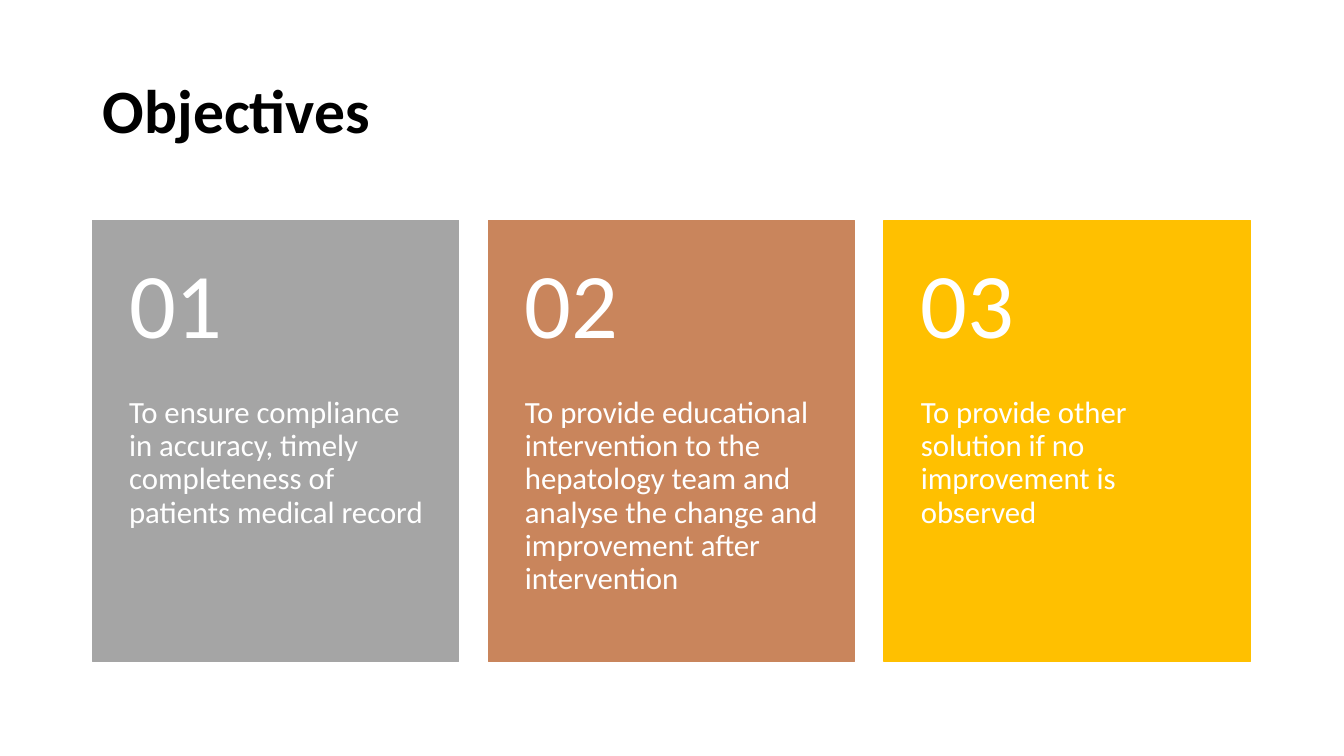
from pptx import Presentation
from pptx.dml.color import RGBColor
from pptx.enum.shapes import MSO_SHAPE
from pptx.enum.text import MSO_ANCHOR as Anchor, PP_ALIGN
from pptx.util import Pt

PX = 9525  # EMU per px, 96 px to the inch
BLACK = RGBColor(0x00, 0x00, 0x00)
WHITE = RGBColor(0xFF, 0xFF, 0xFF)
GREY = RGBColor(0xA5, 0xA5, 0xA5)
COPPER = RGBColor(0xC9, 0x85, 0x5C)
GOLD = RGBColor(0xFF, 0xC0, 0x00)

OBJECTIVES = [
    (GREY, "To ensure compliance in accuracy, timely completeness of "
           "patients medical record"),
    (COPPER, "To provide educational intervention to the hepatology team and "
             "analyse the change and improvement after intervention"),
    (GOLD, "To provide other solution if no improvement is observed"),
]


def px(*lengths):
    return [n * PX for n in lengths]


def add_text(slide, box, text, size, color, insets, anchor, bold=False):
    """Place one paragraph in box; insets are left, top, right, bottom."""
    tf = slide.shapes.add_textbox(*px(*box)).text_frame
    tf.word_wrap = True
    tf.vertical_anchor = anchor
    (tf.margin_left, tf.margin_top,
     tf.margin_right, tf.margin_bottom) = px(*insets)
    p = tf.paragraphs[0]
    p.text = text
    p.alignment = PP_ALIGN.LEFT
    p.line_spacing = 0.9
    p.font.name = "Calibri"
    p.font.size = Pt(size)
    p.font.bold = bold
    p.font.color.rgb = color


def add_card(slide, box, number, text, color):
    left, top, width, height = box
    sp = slide.shapes.add_shape(MSO_SHAPE.RECTANGLE, *px(*box))
    sp.shadow.inherit = False
    sp.fill.solid()
    sp.fill.fore_color.rgb = color
    sp.line.color.rgb = color
    sp.line.width = Pt(1)

    number_h = height * 2 // 5
    add_text(slide, (left, top, width, number_h), f"{number:02d}", 66, WHITE,
             (35, 17, 35, 17), Anchor.MIDDLE)
    add_text(slide, (left, top + number_h, width, height - number_h), text, 22,
             WHITE, (35, 0, 33, 35), Anchor.TOP)


def add_cards(slide, box, gap):
    left, top, width, height = box
    count = len(OBJECTIVES)
    card_w = (width - gap * (count - 1)) // count
    for i, (color, text) in enumerate(OBJECTIVES):
        add_card(slide, (left + i * (card_w + gap), top, card_w, height),
                 i + 1, text, color)


def main():
    prs = Presentation()
    prs.slide_width, prs.slide_height = px(1280, 720)
    slide = prs.slides.add_slide(prs.slide_layouts[6])
    add_text(slide, (88, 39, 1104, 139), "Objectives", 44, BLACK,
             (10, 5, 10, 5), Anchor.MIDDLE, bold=True)
    add_cards(slide, (88, 210, 1104, 420), 28)
    prs.save("out.pptx")


if __name__ == "__main__":
    main()
